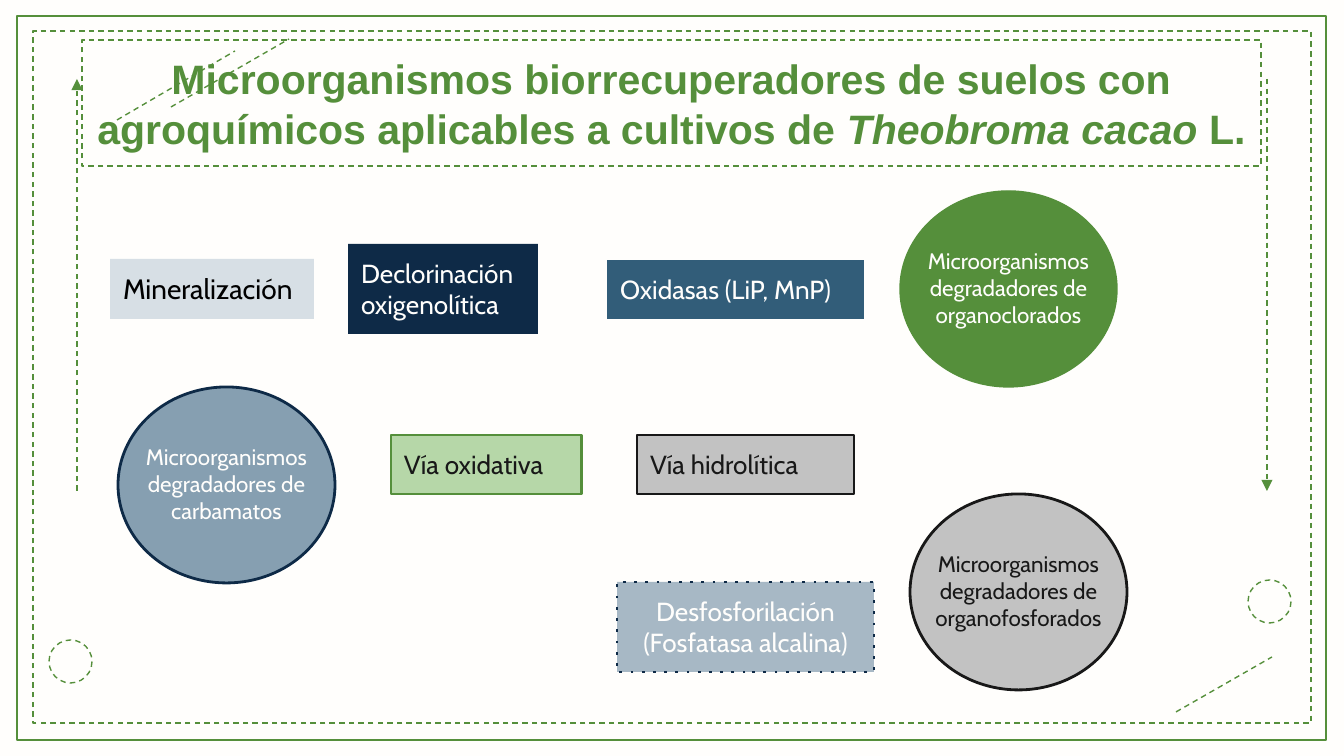
from lxml.etree import SubElement
from pptx import Presentation
from pptx.dml.color import RGBColor
from pptx.enum.dml import MSO_LINE
from pptx.enum.shapes import MSO_CONNECTOR as Connector, MSO_SHAPE as Shape
from pptx.enum.text import MSO_ANCHOR as Anchor, PP_ALIGN as Align
from pptx.oxml.ns import qn
from pptx.util import Emu, Pt

GREEN, CREAM, NAVY, INK, GREY = "558F3B", "FFFEFC", "0E2A47", "181818", "C2C2C2"
DASHED = (GREEN, 0.75, "dash")
INSET = 13

TITLE = [
    ("Microorganismos biorrecuperadores de suelos con "
     "agroquímicos aplicables a cultivos de ", False),
    ("Theobroma cacao", True),
    (" L.", False),
]
TITLE_BOX = (82, 40, 1179, 126)

FRAMES = [
    ((17, 16, 1309, 724), (GREEN, 1.5, None)),
    ((33, 31, 1278, 692), DASHED),
]
RINGS = [(49, 640), (1248, 580)]
RING_SIZE = 43
STROKES = [
    ((1176, 712), (1272, 657), False),
    ((117, 120), (235, 51), False),
    ((171, 107), (289, 39), False),
    ((77, 491), (77, 79), True),
    ((1267, 79), (1267, 491), True),
]

CIRCLE_SIZE = (217, 196)
LABEL_SIZE = (289, 109)
CIRCLES = [
    ("organoclorados", (900, 191), GREEN, (GREEN, 0.75, None), CREAM),
    ("carbamatos", (118, 387), "869FB1", (NAVY, 1.5, None), CREAM),
    ("organofosforados", (910, 494), GREY, (INK, 1.5, None), INK),
]
PROCESSES = [
    (["Mineralización"], (110, 259, 204, 60), "D7DFE5", None, "000000", 15, Align.LEFT),
    (["Declorinación oxigenolítica"], (348, 244, 190, 90), NAVY, None, CREAM, 14, Align.LEFT),
    (["Oxidasas (LiP, MnP)"], (607, 260, 257, 59), "325D79", None, CREAM, 14, Align.LEFT),
    (["Vía oxidativa"], (391, 435, 191, 59), "B6D7A8", (GREEN, 1.5, None), INK, 14, Align.LEFT),
    (["Vía hidrolítica"], (637, 435, 217, 59), GREY, (INK, 1.5, None), INK, 14, Align.LEFT),
    (["Desfosforilación", "(Fosfatasa alcalina)"], (617, 582, 257, 90), "7994A9",
     (NAVY, 1.5, "dot"), CREAM, 14, Align.CENTER),
]
TRANSLUCENT = {"7994A9": 65}


def px(value):
    return Emu(round(value * 914400 / 134.4))


def color(value):
    return RGBColor.from_string(value)


def set_line(shape, line):
    if line is None:
        shape.line.fill.background()
        return
    stroke, width, dash = line
    shape.line.color.rgb = color(stroke)
    shape.line.width = Pt(width)
    if dash:
        shape.line.dash_style = MSO_LINE.DASH
        shape._element.xpath(".//a:prstDash")[0].set("val", dash)


def add_shape(kind, box, fill, line):
    shape = slide.shapes.add_shape(kind, *map(px, box))
    shape.shadow.inherit = False
    if fill is None:
        shape.fill.background()
    else:
        shape.fill.solid()
        shape.fill.fore_color.rgb = color(fill)
        if fill in TRANSLUCENT:
            solid = shape._element.xpath("./p:spPr/a:solidFill/a:srgbClr")[0]
            SubElement(solid, qn("a:alpha"), val=str(TRANSLUCENT[fill] * 1000))
    set_line(shape, line)
    return shape


def add_stroke(start, end, arrow):
    connector = slide.shapes.add_connector(Connector.STRAIGHT, *map(px, start + end))
    set_line(connector, DASHED)
    if arrow:
        SubElement(connector.line._ln, qn("a:tailEnd"), type="triangle")
    SubElement(connector._element.spPr, qn("a:effectLst"))


def write(shape, paragraphs, text_color, size, align, font="Cabin", bold=False, anchor=Anchor.TOP):
    frame = shape.text_frame
    frame_format = {"word_wrap": True, "vertical_anchor": anchor}
    frame_format.update({f"margin_{side}": px(INSET) for side in ("left", "top", "right", "bottom")})
    for name, value in frame_format.items():
        setattr(frame, name, value)
    for index, runs in enumerate(paragraphs):
        paragraph = frame.add_paragraph() if index else frame.paragraphs[0]
        paragraph.alignment = align
        for text, italic in runs:
            run = paragraph.add_run()
            run.text = text
            run_format = {"name": font, "size": Pt(size), "bold": bold, "italic": italic}
            for name, value in run_format.items():
                setattr(run.font, name, value)
            run.font.color.rgb = color(text_color)


def add_circle(group, corner, fill, line, text_color):
    add_shape(Shape.OVAL, corner + CIRCLE_SIZE, fill, line)
    left, top = (start + (outer - inner) / 2
                 for start, outer, inner in zip(corner, CIRCLE_SIZE, LABEL_SIZE))
    label = slide.shapes.add_textbox(*map(px, (left, top) + LABEL_SIZE))
    text = f"Microorganismos degradadores de {group}"
    write(label, [[(text, False)]], text_color, 12, Align.CENTER)


presentation = Presentation()
presentation.slide_width, presentation.slide_height = px(1344), px(756)
slide = presentation.slides.add_slide(presentation.slide_layouts[6])
slide.background.fill.solid()
slide.background.fill.fore_color.rgb = color(CREAM)

for box, line in FRAMES:
    add_shape(Shape.RECTANGLE, box, None, line)
for corner in RINGS:
    add_shape(Shape.OVAL, corner + (RING_SIZE, RING_SIZE), CREAM, DASHED)
for stroke in STROKES:
    add_stroke(*stroke)

title = add_shape(Shape.RECTANGLE, TITLE_BOX, None, DASHED)
write(title, [TITLE], GREEN, 22, Align.CENTER, "Arial", True, Anchor.MIDDLE)

for circle in CIRCLES:
    add_circle(*circle)
for lines, box, fill, line, text_color, size, align in PROCESSES:
    process = add_shape(Shape.RECTANGLE, box, fill, line)
    write(process, [[(text, False)] for text in lines], text_color, size, align)

presentation.save("out.pptx")
